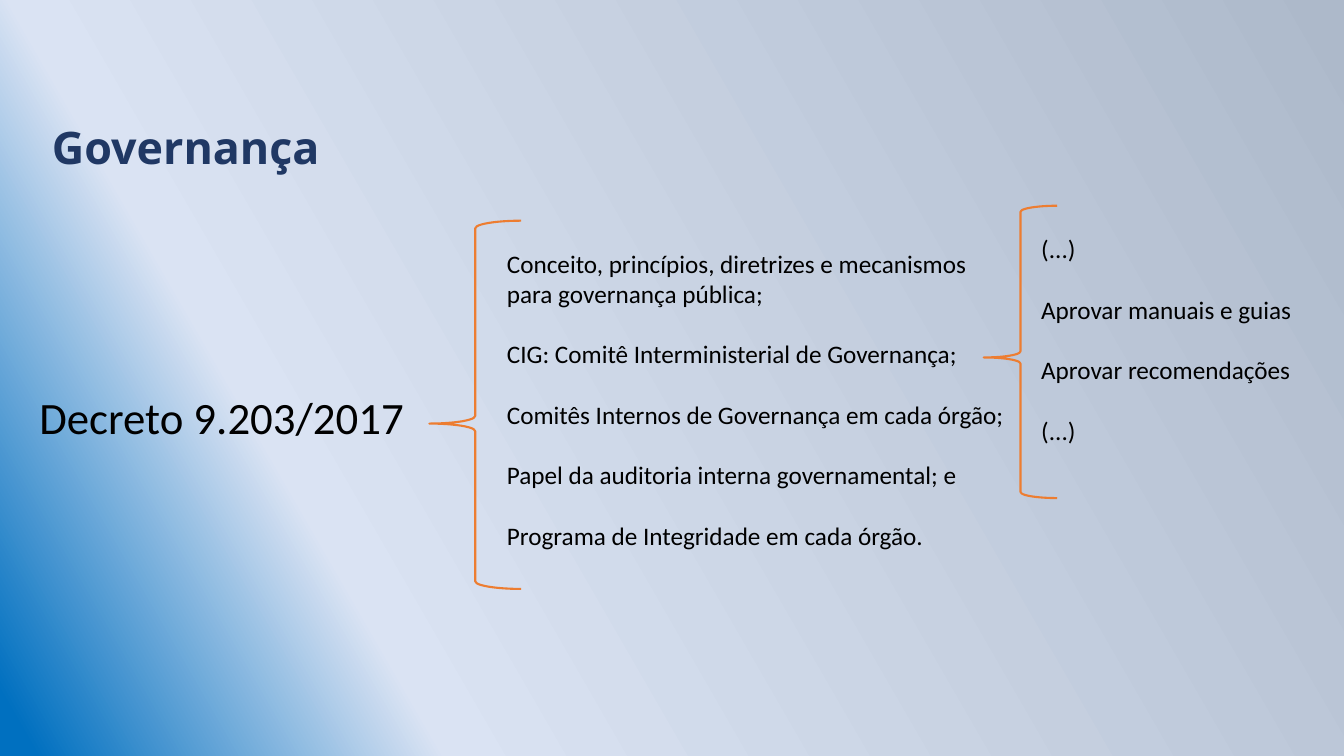
from copy import deepcopy
from dataclasses import dataclass

from pptx import Presentation
from pptx.dml.color import RGBColor
from pptx.enum.shapes import MSO_SHAPE
from pptx.enum.text import MSO_AUTO_SIZE
from pptx.oxml.ns import qn
from pptx.util import Pt

LEFT_BRACE = MSO_SHAPE.LEFT_BRACE
GROW = MSO_AUTO_SIZE.SHAPE_TO_FIT_TEXT


@dataclass(frozen=True)
class Theme:
    title: str = "203864"
    text: str = "000000"
    brace: str = "ED7D31"
    background: tuple = ((0, "ADB9CA"), (0.75, "DAE3F3"), (0.98, "0070C0"))
    title_font: str = "Open Sans"
    body_font: str = "Calibri"
    large: float = 32
    body: float = 18
    item_gap: float = 21.6
    brace_line: float = 1.5


THEME = Theme()

DECREE_ITEMS = (
    ("Conceito, princípios, diretrizes e mecanismos", "para governança pública;"),
    ("CIG: Comitê Interministerial de Governança;",),
    ("Comitês Internos de Governança em cada órgão;",),
    ("Papel da auditoria interna governamental; e",),
    ("Programa de Integridade em cada órgão.",),
)
COMMITTEE_ITEMS = (
    ("(...)",), ("Aprovar manuais e guias",), ("Aprovar recomendações",), ("(...)",),
)


def add_text(slide, items, box, *, size=THEME.body, font=THEME.body_font,
             color=THEME.text, bold=False, wrap=False):
    """Write items, each a tuple of lines, with a gap between items."""
    shape = slide.shapes.add_textbox(*map(Pt, box))
    frame = shape.text_frame
    frame.word_wrap = wrap
    frame.auto_size = GROW
    paragraph = frame.paragraphs[0]
    for item_index, lines in enumerate(items):
        for line_index, line in enumerate(lines):
            if item_index or line_index:
                paragraph = frame.add_paragraph()
            if item_index and not line_index:
                paragraph.space_before = Pt(THEME.item_gap)
            run = paragraph.add_run()
            run.text = line
            run.font.size = Pt(size)
            run.font.name = font
            run.font.bold = bold
            run.font.color.rgb = RGBColor.from_string(color)


def add_background(slide):
    fill = slide.background.fill
    fill.gradient()
    fill.gradient_angle = 210
    stop_list = next(slide.element.iter(qn("a:gsLst")))
    stop_list.append(deepcopy(stop_list[-1]))
    for stop, (position, color) in zip(fill.gradient_stops, THEME.background):
        stop.position = position
        stop.color.rgb = RGBColor.from_string(color)


def add_braced_list(slide, items, box, *, tip, text_offset, text_size):
    """Draw a left brace in the box and its list, offset from the box corner."""
    left, top, _, _ = box
    brace = slide.shapes.add_shape(LEFT_BRACE, *map(Pt, box))
    brace.shadow.inherit = False
    brace.fill.background()
    brace.line.color.rgb = RGBColor.from_string(THEME.brace)
    brace.line.width = Pt(THEME.brace_line)
    brace.adjustments[0] = 0.083
    brace.adjustments[1] = tip
    offset_x, offset_y = text_offset
    add_text(slide, items, (left + offset_x, top + offset_y, *text_size))


def add_governance_slide(presentation):
    slide = presentation.slides.add_slide(presentation.slide_layouts[6])
    add_background(slide)
    add_text(slide, [("Governança",)], (30, 82, 888.5, 46), size=THEME.large,
             font=THEME.title_font, color=THEME.title, bold=True, wrap=True)
    add_text(slide, [("Decreto 9.203/2017",)], (21, 274.5, 278, 46),
             size=THEME.large)
    add_braced_list(slide, DECREE_ITEMS, (306.7, 157.7, 65.5, 263), tip=0.551,
                    text_offset=(48.3, 15.8), text_size=(373.7, 247))
    add_braced_list(slide, COMMITTEE_ITEMS, (702.7, 147, 52.5, 208.8), tip=0.519,
                    text_offset=(33.9, 16.4), text_size=(195, 160))


def main():
    presentation = Presentation()
    presentation.slide_width = Pt(960)
    presentation.slide_height = Pt(540)
    add_governance_slide(presentation)
    presentation.save("out.pptx")


if __name__ == "__main__":
    main()
